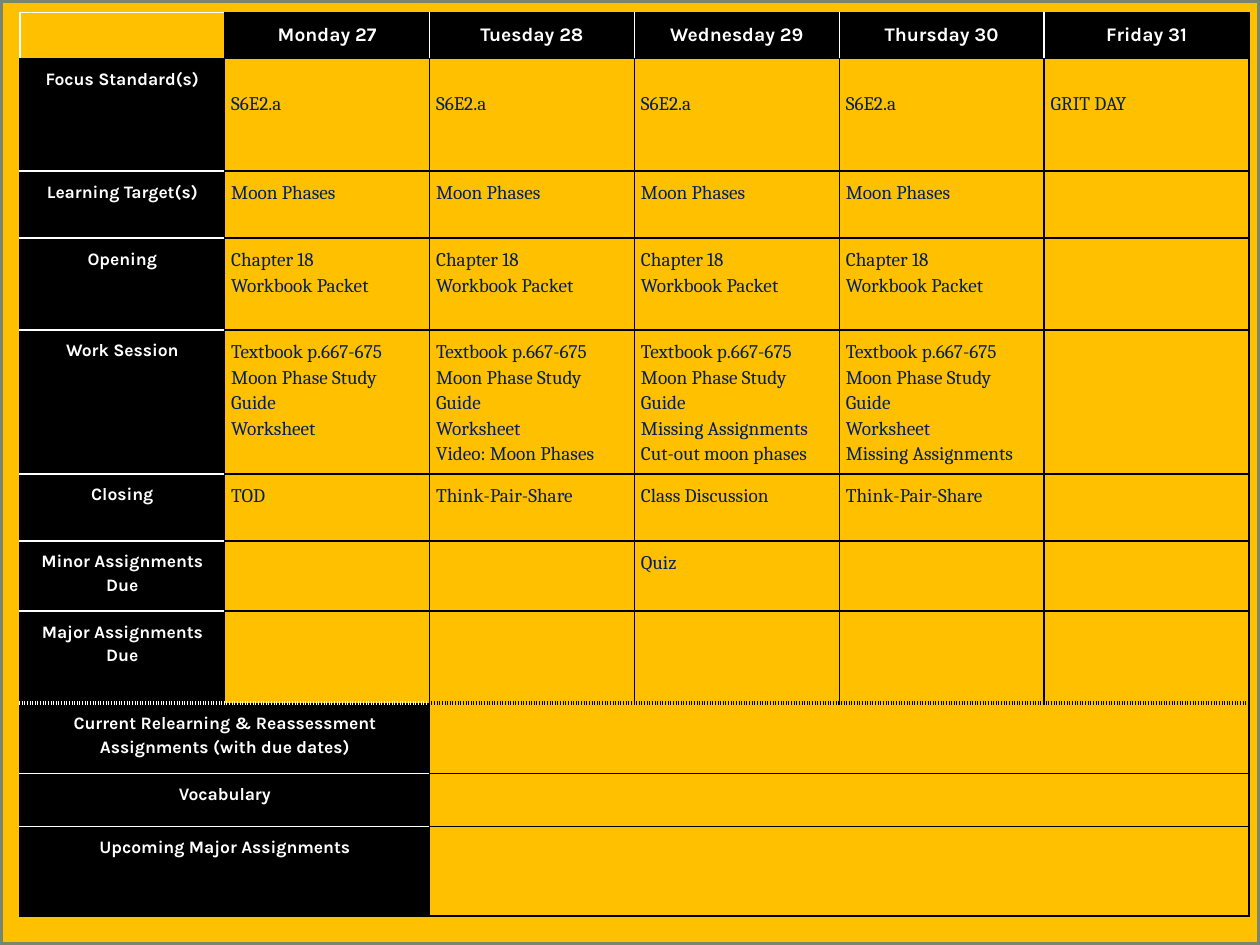
from dataclasses import dataclass

from pptx import Presentation
from pptx.dml.color import RGBColor
from pptx.enum.shapes import MSO_SHAPE as Preset
from pptx.enum.text import PP_ALIGN as Align
from pptx.oxml.ns import qn
from pptx.util import Cm, Pt
from lxml.etree import SubElement


@dataclass(frozen=True)
class Theme:
    gold: str = "FFC000"
    black: str = "000000"
    white: str = "FFFFFF"
    navy: str = "002060"
    frame: str = "7A866C"
    label_font: str = "Karla"
    entry_font: str = "Cambria"
    label_size: float = 10
    entry_size: float = 11
    frame_width: float = 3
    rule_width: float = 1
    divider_width: float = 2.25


THEME = Theme()
DAYS = ["Monday 27", "Tuesday 28", "Wednesday 29", "Thursday 30", "Friday 31"]
OPENING = ["Chapter 18", "Workbook Packet"]
STUDY = ["Textbook p.667-675", "Moon Phase Study Guide"]
DAILY_PLAN = [
    ("Focus Standard(s)", 2.27, [["S6E2.a"]] * 4 + [["GRIT DAY"]]),
    ("Learning Target(s)", 1.35, [["Moon Phases"]] * 4),
    ("Opening", 1.85, [OPENING] * 4),
    ("Work Session", 2.88, [
        STUDY + ["Worksheet"],
        STUDY + ["Worksheet", "Video: Moon Phases"],
        STUDY + ["Missing Assignments", "Cut-out moon phases"],
        STUDY + ["Worksheet", "Missing Assignments"],
    ]),
    ("Closing", 1.35, [["TOD"], ["Think-Pair-Share"], ["Class Discussion"], ["Think-Pair-Share"]]),
    ("Minor Assignments Due", 1.42, [[], [], ["Quiz"]]),
    ("Major Assignments Due", 1.85, []),
]
WEEKLY_PLAN = [
    ("Current Relearning & Reassessment Assignments (with due dates)", 1.42),
    ("Vocabulary", 1.07),
    ("Upcoming Major Assignments", 1.8),
]
HEADER_HEIGHT = 0.93
DAY_WIDTH = 4.13
COLUMNS = len(DAYS) + 1
WEEKLY_START = len(DAILY_PLAN) + 1
ROWS = WEEKLY_START + len(WEEKLY_PLAN)
FOCUS_ROW = 1


def rgb(color):
    return RGBColor.from_string(color)


def is_label(row, column):
    if row == 0:
        return column > 0
    return column < (2 if row >= WEEKLY_START else 1)


def horizontal_rule(line, column):
    between_labels = FOCUS_ROW < line < ROWS and is_label(line, column)
    color = THEME.white if between_labels or line == column == 0 else THEME.black
    if line == WEEKLY_START:
        return color, THEME.divider_width, "sysDot"
    return color, THEME.rule_width, "solid"


def vertical_rule(row, line):
    in_header = row == 0 and line not in (1, COLUMNS)
    return (THEME.white if in_header else THEME.black), THEME.rule_width, "solid"


def draw_borders(cell, row, column):
    properties = cell._tc.get_or_add_tcPr()
    rules = {
        "a:lnL": vertical_rule(row, column),
        "a:lnR": vertical_rule(row, column + 1),
        "a:lnT": horizontal_rule(row, column),
        "a:lnB": horizontal_rule(row + 1, column),
    }
    for side, (color, width, dash) in rules.items():
        rule = SubElement(properties, qn(side), w=str(Pt(width)))
        SubElement(SubElement(rule, qn("a:solidFill")), qn("a:srgbClr"), val=color)
        SubElement(rule, qn("a:prstDash"), val=dash)


def style_cell(cell, row, column):
    draw_borders(cell, row, column)
    if is_label(row, column):
        cell.fill.solid()
        cell.fill.fore_color.rgb = rgb(THEME.black)
    else:
        cell.fill.background()
    cell.margin_left = cell.margin_right = Cm(0.13)
    cell.margin_top = cell.margin_bottom = Cm(0.16) if cell.text else 0


def write_lines(cell, lines, font, size, color, bold=False, align=Align.LEFT):
    cell.text = "\n".join(lines)
    for paragraph in cell.text_frame.paragraphs:
        paragraph.alignment = align
        paragraph.line_spacing = 1.15
        paragraph.font.name = font
        paragraph.font.size = Pt(size)
        paragraph.font.color.rgb = rgb(color)
        paragraph.font.bold = bold


def write_label(cell, label, size=THEME.label_size):
    write_lines(cell, [label], THEME.label_font, size, THEME.white, True, Align.CENTER)


def write_entry(cell, lines):
    write_lines(cell, lines, THEME.entry_font, THEME.entry_size, THEME.navy)


def add_backdrop(slide, width, height):
    slide.background.fill.solid()
    slide.background.fill.fore_color.rgb = rgb(THEME.black)
    backdrop = slide.shapes.add_shape(Preset.RECTANGLE, 0, 0, width, height)
    backdrop.shadow.inherit = False
    backdrop.fill.solid()
    backdrop.fill.fore_color.rgb = rgb(THEME.gold)
    backdrop.line.color.rgb = rgb(THEME.frame)
    backdrop.line.width = Pt(THEME.frame_width)


def add_planner(slide):
    heights = [HEADER_HEIGHT, *(plan[1] for plan in DAILY_PLAN + WEEKLY_PLAN)]
    planner = slide.shapes.add_table(
        ROWS, COLUMNS, Cm(0.4), Cm(0.25), Cm(DAY_WIDTH * COLUMNS), Cm(sum(heights))
    ).table
    planner.first_row = planner.horz_banding = False
    for column in planner.columns:
        column.width = Cm(DAY_WIDTH)
    for row, height in zip(planner.rows, heights):
        row.height = Cm(height)
    return planner


def fill_planner(planner):
    for column, day in enumerate(DAYS, 1):
        write_label(planner.cell(0, column), day, THEME.entry_size)
    for row, (label, _, entries) in enumerate(DAILY_PLAN, 1):
        write_label(planner.cell(row, 0), label)
        for column, lines in enumerate(entries, 1):
            write_entry(planner.cell(row, column), lines)
    for row, (label, _) in enumerate(WEEKLY_PLAN, WEEKLY_START):
        planner.cell(row, 0).merge(planner.cell(row, 1))
        planner.cell(row, 2).merge(planner.cell(row, COLUMNS - 1))
        write_label(planner.cell(row, 0), label)


def style_planner(planner):
    for row in range(ROWS):
        for column in range(COLUMNS):
            style_cell(planner.cell(row, column), row, column)
    for column in range(1, COLUMNS):
        planner.cell(FOCUS_ROW, column).margin_top = Cm(0.63)


def main():
    presentation = Presentation()
    presentation.slide_width = Cm(25.4)
    presentation.slide_height = Cm(19.05)
    slide = presentation.slides.add_slide(presentation.slide_layouts[6])
    add_backdrop(slide, presentation.slide_width, presentation.slide_height)
    planner = add_planner(slide)
    fill_planner(planner)
    style_planner(planner)
    presentation.save("out.pptx")


if __name__ == "__main__":
    main()
